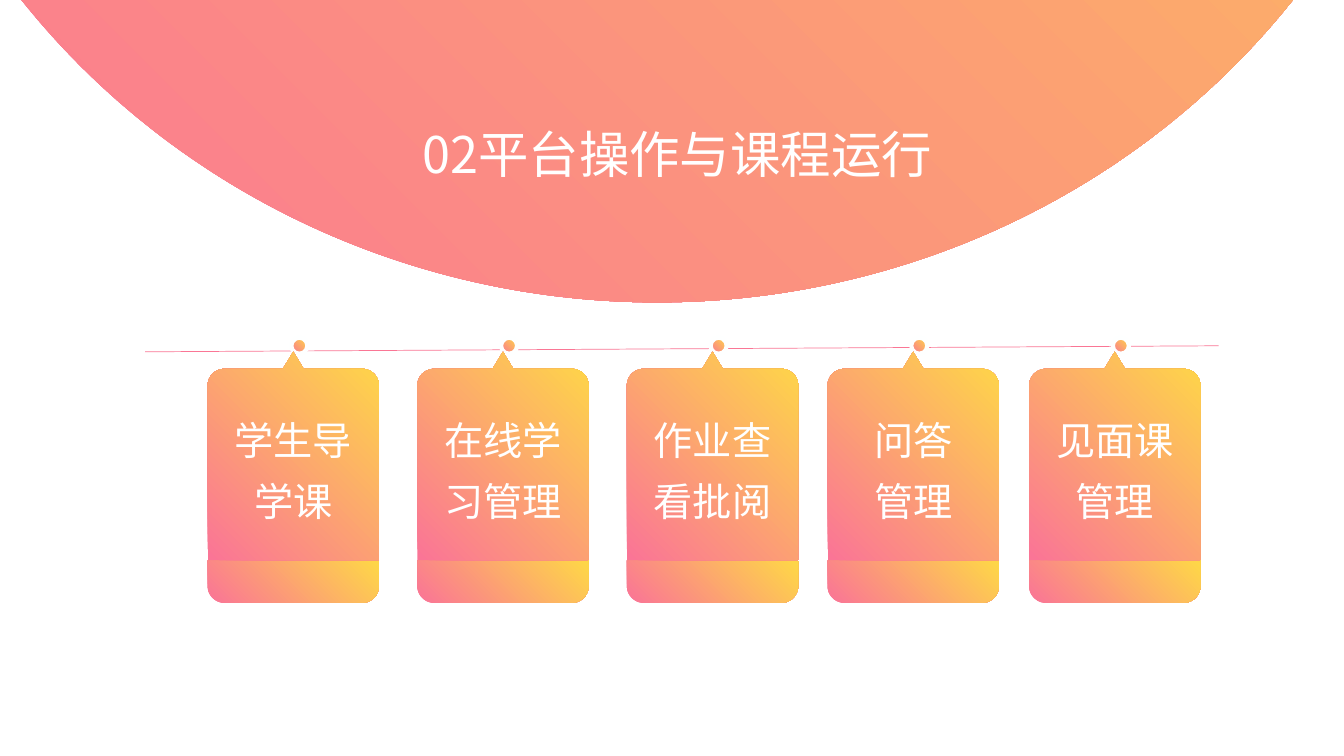
"""Section slide: a gradient dome with the title and a timeline of five cards."""
import math
from dataclasses import dataclass

import pptx
import pptx.util
import pptx.dml.color
import pptx.enum.shapes
import pptx.enum.text
import pptx.oxml
from lxml import etree

Pt = pptx.util.Pt
RGB = pptx.dml.color.RGBColor.from_string
ALIGN = pptx.enum.text.PP_ALIGN
OVAL = pptx.enum.shapes.MSO_SHAPE.OVAL
STRAIGHT = pptx.enum.shapes.MSO_CONNECTOR.STRAIGHT
A = "{http://schemas.openxmlformats.org/drawingml/2006/main}"


@dataclass(frozen=True)
class Theme:
    """Colours, font and type sizes."""
    pink: str = "FA7596"
    yellow: str = "FED648"
    rule: str = "FA7695"
    white: str = "FFFFFF"
    ring: str = "FEFFFF"
    font: str = "Noto Sans CJK SC"
    title: int = 36
    card: int = 28


THEME = Theme()
CARD_W, RADIUS, TIP_HALF = 122.4, 12, 7.4
TIP_Y, SHOULDER_Y, BODY_END, BASE_END = 251.3, 263.5, 400.3, 430.6
DOT_X, DOT_Y, DOT_SIZE = 59.8, 241.2, 11.5
CARDS = [
    (148.3, "学生导学课"),
    (298.1, "在线学习管理"),
    (447.8, "作业查看批阅"),
    (591.1, "问答\n管理"),
    (735.1, "见面课管理"),
]


def paint(sp, ring=0):
    """Fill a shape with the diagonal gradient and an optional light ring."""
    sp.shadow.inherit = False
    sp.fill.gradient()
    sp.fill.gradient_angle = 45
    stops = ((0.01, THEME.pink), (0.98, THEME.yellow))
    for stop, (position, color) in zip(sp.fill.gradient_stops, stops):
        stop.position = position
        stop.color.rgb = RGB(color)
    if ring:
        sp.line.color.rgb = RGB(THEME.ring)
        sp.line.width = Pt(ring)
    else:
        sp.line.fill.background()


def write(sp, text, size, align, spacing, insets):
    """Put white text, centred vertically, into a shape."""
    tf = sp.text_frame
    tf.text = text
    tf.word_wrap = True
    tf.auto_size = pptx.enum.text.MSO_AUTO_SIZE.NONE
    tf.vertical_anchor = pptx.enum.text.MSO_ANCHOR.MIDDLE
    tf.margin_left, tf.margin_top, tf.margin_right, tf.margin_bottom = map(Pt, insets)
    for p in tf.paragraphs:
        p.alignment = align
        p.line_spacing = spacing
        p.font.size = Pt(size)
        p.font.name = THEME.font
        p.font.color.rgb = RGB(THEME.white)
        latin = p.font._element.find(A + "latin")
        latin.addnext(etree.Element(A + "ea", typeface=THEME.font))


def add_disc(shapes, x, y, w, h, ring=0):
    """Add a gradient ellipse."""
    sp = shapes.add_shape(OVAL, Pt(x), Pt(y), Pt(w), Pt(h))
    paint(sp, ring)
    return sp


def add_rule(shapes, x1, y1, x2, y2):
    """Add the thin timeline."""
    line = shapes.add_connector(STRAIGHT, Pt(x1), Pt(y1), Pt(x2), Pt(y2))
    line.line.color.rgb = RGB(THEME.rule)
    line.line.width = Pt(0.5)
    etree.SubElement(line.element.spPr, A + "effectLst")


def corner(cx, cy, start):
    """Return points of a clockwise quarter arc that begins at start degrees."""
    angles = [math.radians(start + step) for step in range(0, 91, 9)]
    return [(cx + RADIUS * math.cos(a), cy + RADIUS * math.sin(a)) for a in angles]


def add_outline(shapes, points):
    """Add a closed gradient outline through points."""
    (x, y), *rest = [(Pt(px), Pt(py)) for px, py in points]
    builder = shapes.build_freeform(x, y)
    builder.add_line_segments(rest, close=True)
    sp = builder.convert_to_shape()
    paint(sp)
    return sp


def add_card(shapes, x, text):
    """Add a card: a plain base below a pointed body with its label."""
    grp = shapes.add_group_shape().shapes
    right, mid = x + CARD_W, x + CARD_W / 2
    inner_l, inner_r = x + RADIUS, right - RADIUS
    low, high = BASE_END - RADIUS, SHOULDER_Y + RADIUS
    add_outline(grp, [(x, BODY_END), (right, BODY_END),
                      *corner(inner_r, low, 0), *corner(inner_l, low, 90)])
    body = add_outline(grp, [(mid, TIP_Y), (mid + TIP_HALF, SHOULDER_Y),
                             *corner(inner_r, high, 270),
                             (right, BODY_END), (x, BODY_END),
                             *corner(inner_l, high, 180),
                             (mid - TIP_HALF, SHOULDER_Y)])
    write(body, text, THEME.card, ALIGN.CENTER, 1.3, (7.2, 14.4, 7.2, 3.6))


def main():
    """Build the slide and save it."""
    prs = pptx.Presentation()
    prs.slide_width, prs.slide_height = Pt(960), Pt(540)
    s = prs.slides.add_slide(prs.slide_layouts[5])
    dome = add_disc(s.shapes, -103.7, -892.1, 1146.2, 1108.1)

    title = s.shapes.title
    title.left, title.top, title.width, title.height = map(Pt, (294.5, 84.2, 426.2, 50.4))
    write(title, "02平台操作与课程运行", THEME.title, ALIGN.LEFT, 1.0, (7.2, 3.6, 7.2, 3.6))
    dome.element.addnext(title.element)

    add_rule(s.shapes, 103.7, 251.3, 870.5, 247)
    for x, _ in CARDS:
        add_disc(s.shapes, x + DOT_X, DOT_Y, DOT_SIZE, DOT_SIZE, ring=3)
    for x, text in CARDS:
        add_card(s.shapes, x, text)
    prs.save("out.pptx")


if __name__ == "__main__":
    main()
